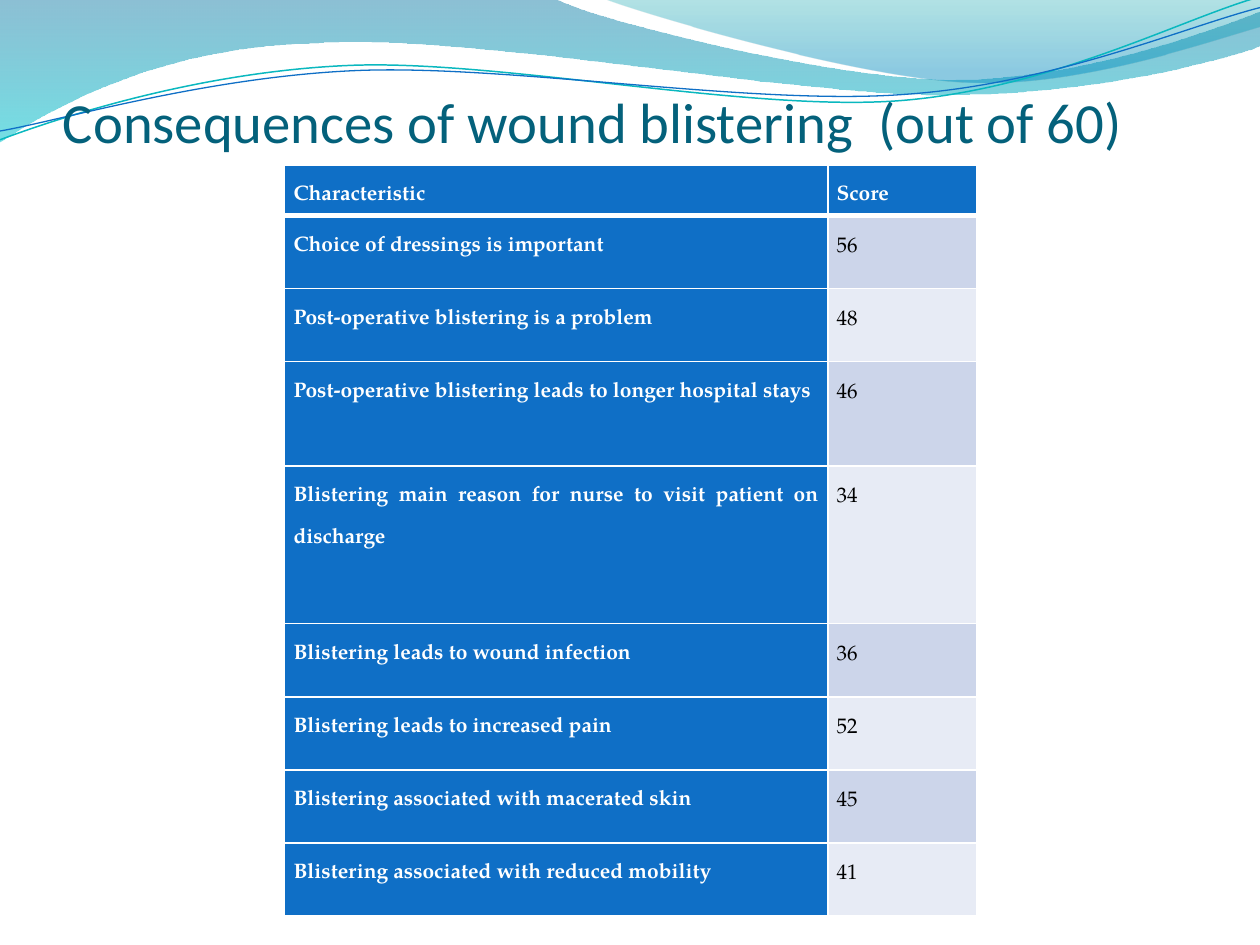
from math import cos, radians, sin

from lxml.etree import SubElement
from pptx import Presentation
from pptx.dml.color import RGBColor
from pptx.enum.text import MSO_ANCHOR, PP_ALIGN
from pptx.oxml.ns import qn
from pptx.util import Inches, Pt

THEME = {
    "title": "04617B", "blue": "0F6FC6", "teal": "0AB8BF",
    "white": "FFFFFF", "black": "000000", "bands": ("CCD5EA", "E7EBF5"),
    "title_font": "Calibri", "table_font": "TeX Gyre Pagella",
    "title_size": 32.4, "table_size": 12,
}

presentation = Presentation()
presentation.slide_width, presentation.slide_height = Inches(10), Inches(7.5)
slide = presentation.slides.add_slide(presentation.slide_layouts[6])
# Square grid: 10 columns by 7.5 rows
UNIT = presentation.slide_width / 10


def grid(value):
    return round(value * UNIT)


def add_curve(box, start, segments, closed, rotation=0):
    """Draw line (one point) and Bezier (three point) segments within a box."""
    left, top, width, height = box
    builder = slide.shapes.build_freeform(grid(left), grid(top), scale=1.0)
    builder.add_line_segments([(grid(left + width), grid(top + height))], close=False)
    shape = builder.convert_to_shape()
    shape.shadow.inherit = False
    shape.rotation = rotation

    # Swap the box diagonal for the curve, turned back about the box centre
    outline = next(shape._element.iter(qn("a:path")))
    for child in list(outline):
        outline.remove(child)
    cosine, sine = cos(radians(-rotation)), sin(radians(-rotation))
    for number, points in enumerate([[start], *segments]):
        command = "moveTo" if number == 0 else "lnTo" if len(points) == 1 else "cubicBezTo"
        element = SubElement(outline, qn(f"a:{command}"))
        for x, y in points:
            across, down = x - left - width / 2, y - top - height / 2
            SubElement(element, qn("a:pt"),
                       x=str(grid(width / 2 + across * cosine - down * sine)),
                       y=str(grid(height / 2 + across * sine + down * cosine)))
    if closed:
        SubElement(outline, qn("a:close"))
    return shape


# Translucent waves: box, start, segments, gradient stops (position, colour, opacity)
waves = [
    ((-0.01, -0.01, 10.02, 1.14), (0, 0),
     [[(4.4, -0.01)], [(4.76, 0.17), (6.64, 0.63), (7.58, 0.63)],
      [(8.53, 0.63), (9.58, 0.26), (10, 0.09)], [(10.01, 0.36)],
      [(9.83, 0.44), (8.7, 0.76), (7.46, 0.75)],
      [(6.22, 0.75), (3.82, 0.28), (2.57, 0.34)],
      [(1.29, 0.36), (0.46, 0.83), (-0.01, 1.13)], [(0, 0)]],
     [(0, "0074A1", 45), (1, "00C6CF", 55)]),
    ((4.79, -0.01, 5.21, 0.7), (4.79, -0.01),
     [[(5.09, 0.11), (6.82, 0.62), (7.69, 0.65)],
      [(8.56, 0.69), (9.61, 0.32), (10, 0.21)], [(10, 0)], [(4.79, -0.01)]],
     [(0, "00A1A9", 30), (0.8, "008BBF", 45)]),
]
for box, start, segments, stops in waves:
    wave = add_curve(box, start, segments, closed=True)
    wave.line.fill.background()
    wave.fill.gradient()
    wave.fill.gradient_angle = 270
    for stop, (position, colour, _) in zip(wave.fill.gradient_stops, stops):
        stop.position = position
        stop.color.rgb = RGBColor.from_string(colour)
    for colour_xml, (_, _, opacity) in zip(wave._element.spPr.iter(qn("a:srgbClr")), stops):
        SubElement(colour_xml, qn("a:alpha"), val=str(opacity * 1000))

# Thin lines flowing below the waves
ribbons = [
    ((-0.02, 0.22, 10.02, 0.71), (0, 1.11),
     [[(0.48, 0.93), (1.58, 0.57), (2.77, 0.52)],
      [(3.95, 0.47), (5.93, 0.89), (7.13, 0.8)],
      [(8.33, 0.71), (9.38, 0.15), (9.98, -0.02)]], THEME["teal"], 0.85),
    ((-0.02, 0.3, 10.03, 0.58), (0, 1.04),
     [[(0.47, 0.96), (1.64, 0.61), (2.83, 0.56)],
      [(4.03, 0.51), (5.97, 0.84), (7.17, 0.75)],
      [(8.36, 0.67), (9.41, 0.21), (10, 0.06)]], THEME["blue"], 0.75),
]
for box, start, segments, colour, width in ribbons:
    ribbon = add_curve(box, start, segments, closed=False, rotation=357.3)
    ribbon.fill.background()
    ribbon.line.color.rgb = RGBColor.from_string(colour)
    ribbon.line.width = Pt(width)

# Title
title = slide.shapes.add_textbox(grid(0.5), grid(0.52), grid(9), grid(0.71))
text_frame = title.text_frame
text_frame.word_wrap = True
text_frame.vertical_anchor = MSO_ANCHOR.BOTTOM
text_frame.margin_left = text_frame.margin_right = text_frame.margin_bottom = 0
text_frame.text = "Consequences of wound blistering  (out of 60)"
font = text_frame.paragraphs[0].runs[0].font
font.name, font.size = THEME["title_font"], Pt(THEME["title_size"])
font.color.rgb = RGBColor.from_string(THEME["title"])

# Score table: characteristic, score, row height (the header grows to its text)
rows = [
    ("Characteristic", "Score", 0),
    ("Choice of dressings is important", "56", 0.58),
    ("Post-operative blistering is a problem", "48", 0.58),
    ("Post-operative blistering leads to longer hospital stays", "46", 0.83),
    ("Blistering main reason for nurse to visit patient on discharge", "34", 1.25),
    ("Blistering leads to wound infection", "36", 0.58),
    ("Blistering leads to increased pain", "52", 0.58),
    ("Blistering associated with macerated skin", "45", 0.58),
    ("Blistering associated with reduced mobility", "41", 0.58),
]
column_widths = (4.31, 1.18)
table_frame = slide.shapes.add_table(
    len(rows), len(column_widths), grid(2.26), grid(1.31),
    grid(sum(column_widths)), grid(5.95))
table = table_frame.table
for column, width in zip(table.columns, column_widths):
    column.width = grid(width)

for row_index, (*texts, height) in enumerate(rows):
    table.rows[row_index].height = grid(height)
    for column_index, text in enumerate(texts):
        cell = table.cell(row_index, column_index)
        is_heading = row_index == 0 or column_index == 0
        cell.margin_left = cell.margin_right = grid(0.07)
        cell.margin_top = cell.margin_bottom = 0
        cell.text_frame.text = text
        paragraph = cell.text_frame.paragraphs[0]
        paragraph.alignment = PP_ALIGN.JUSTIFY
        paragraph.line_spacing = 2.0
        font = paragraph.runs[0].font
        font.name, font.size, font.bold = THEME["table_font"], Pt(THEME["table_size"]), is_heading
        font.color.rgb = RGBColor.from_string(THEME["white" if is_heading else "black"])

        # White borders, thicker under the header; the fill must follow them
        properties = cell._tc.get_or_add_tcPr()
        for side in ("L", "R", "T", "B"):
            thick = row_index == 0 and side == "B"
            border = SubElement(properties, qn(f"a:ln{side}"), w=str(Pt(3 if thick else 1)))
            SubElement(SubElement(border, qn("a:solidFill")), qn("a:srgbClr"), val=THEME["white"])
        cell.fill.solid()
        cell.fill.fore_color.rgb = RGBColor.from_string(
            THEME["blue"] if is_heading else THEME["bands"][(row_index - 1) % 2])
table_frame.height = grid(5.95)

presentation.save("out.pptx")
